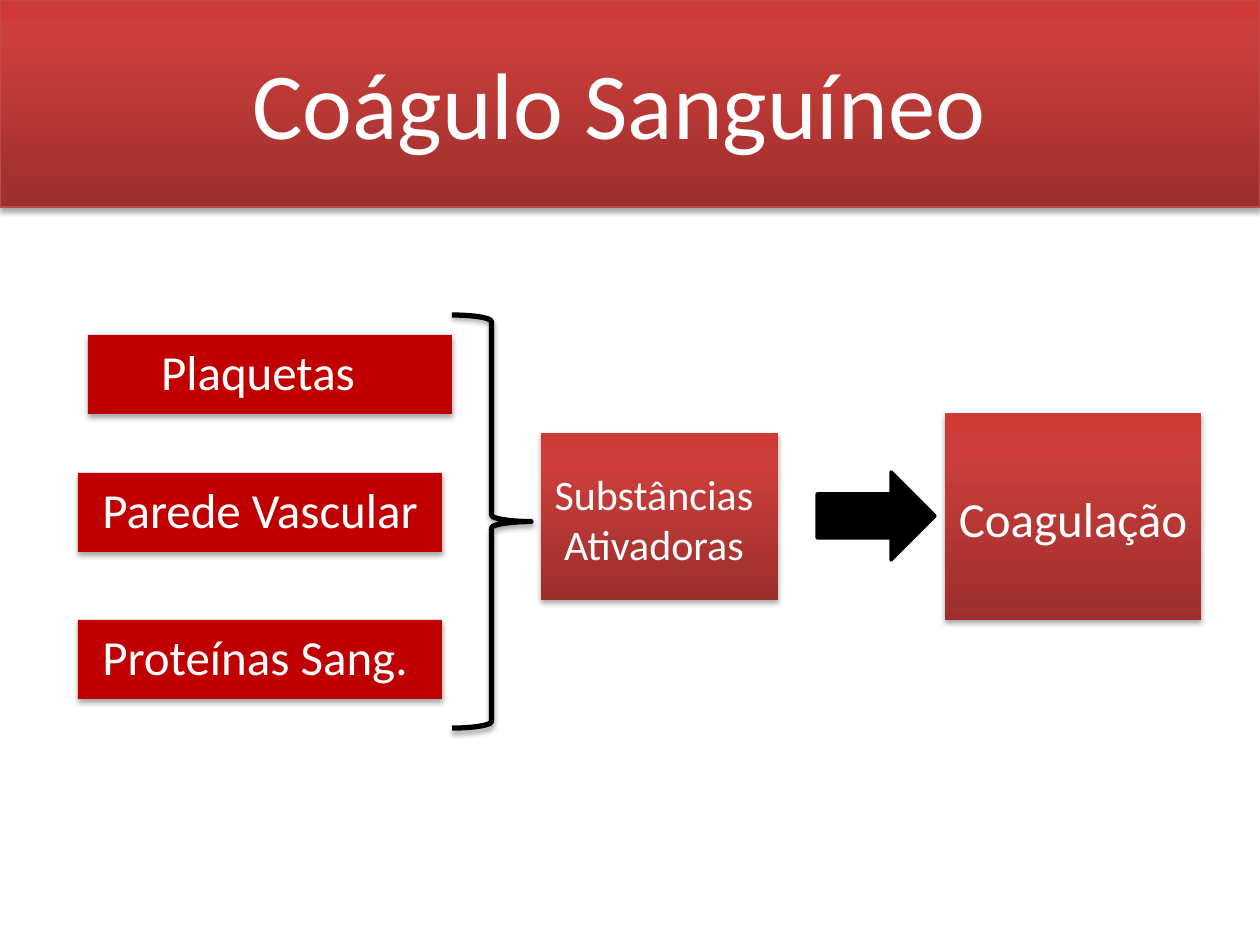
from copy import deepcopy

from pptx import Presentation
from pptx.dml.color import RGBColor
from pptx.enum.shapes import MSO_SHAPE as Shape
from pptx.enum.text import MSO_AUTO_SIZE as AutoSize, PP_ALIGN as Align
from pptx.oxml import parse_xml
from pptx.oxml.ns import nsdecls
from pptx.util import Emu, Pt

PX = 914400 / 126
COLORS = {
    "white": "FFFFFF",
    "black": "000000",
    "red": "C00000",
    "edge": "BF4C48",
    "dark": "9C2F2D",
    "middle": "CB3E3A",
    "light": "CE3B37",
}
GRADIENT = [(0, "dark"), (0.8, "middle"), (1, "light")]


def color(name):
    return RGBColor.from_string(COLORS[name])


def lengths(box):
    return [Emu(round(value * PX)) for value in box]


def inside(box, left, top, width, height):
    return box[0] + left, box[1] + top, width, height


def add_shadow(shape):
    shape._element.spPr.append(parse_xml(
        f'<a:effectLst {nsdecls("a")}>'
        '<a:outerShdw blurRad="40000" dist="23000" dir="5400000" rotWithShape="0">'
        f'<a:srgbClr val="{COLORS["black"]}"><a:alpha val="35000"/></a:srgbClr>'
        '</a:outerShdw></a:effectLst>'))


def fill_gradient(shape):
    shape.fill.gradient()
    shape.fill.gradient_angle = 90
    stop_list = shape._element.spPr.find(".//" + "{*}gsLst")
    stop_list.append(deepcopy(stop_list[0]))
    for stop, (position, name) in zip(shape.fill.gradient_stops, GRADIENT):
        stop.position = position
        stop.color.rgb = color(name)


def add_figure(page, kind, box, fill=None, line=None, weight=1, shadow=True):
    shape = page.shapes.add_shape(kind, *lengths(box))
    shape.shadow.inherit = False
    if fill == "gradient":
        fill_gradient(shape)
    elif fill:
        shape.fill.solid()
        shape.fill.fore_color.rgb = color(fill)
    else:
        shape.fill.background()
    if line:
        shape.line.color.rgb = color(line)
        shape.line.width = Pt(weight)
    else:
        shape.line.fill.background()
    if shadow:
        spPr = shape._element.spPr
        spPr.remove(spPr.find("{*}effectLst"))
        add_shadow(shape)
    return shape


def add_caption(page, box, lines, size):
    frame = page.shapes.add_textbox(*lengths(box)).text_frame
    frame.word_wrap = False
    frame.auto_size = AutoSize.SHAPE_TO_FIT_TEXT
    frame.text = "\n".join(lines)
    for para in frame.paragraphs:
        para.alignment = Align.CENTER
        para.font.name = "Calibri"
        para.font.size = Pt(size)
        para.font.color.rgb = color("white")


def add_banner(page, box):
    add_figure(page, Shape.RECTANGLE, box, "gradient", "edge", 0.75)
    add_caption(page, inside(box, 236, 39, 766, 127), ["Coágulo Sanguíneo"], 54)


def add_factor(page, box, name, text_left, text_width):
    add_figure(page, Shape.RECTANGLE, box, "red")
    add_caption(page, inside(box, text_left, 0, text_width, 72), [name], 28)


def add_factors(page, box):
    factors = [
        ("Plaquetas", 10, 0, 59, 222),
        ("Parede Vascular", 0, 138, 10, 344),
        ("Proteínas Sang.", 0, 285, 10, 334),
    ]
    for name, left, top, text_left, text_width in factors:
        add_factor(page, inside(box, left, top, 364, 79), name, text_left, text_width)


def add_activators(page, box):
    add_figure(page, Shape.FLOWCHART_PROCESS, box, "gradient")
    add_caption(page, inside(box, 0, 29, 226, 115), ["Substâncias", "Ativadoras"], 24)


def add_result(page, box):
    add_figure(page, Shape.RECTANGLE, box, "gradient")
    add_caption(page, inside(box, 0, 69, 256, 72), ["Coagulação"], 28)


def add_links(page, brace_box, arrow_box):
    brace = add_figure(page, Shape.LEFT_BRACE, brace_box, line="black", weight=3)
    brace.rotation = 180
    add_figure(page, Shape.RIGHT_ARROW, arrow_box, "black", "black", 2, shadow=False)


def main():
    deck = Presentation()
    deck.slide_width, deck.slide_height = lengths((1260, 945))
    page = deck.slides.add_slide(deck.slide_layouts[6])
    add_banner(page, (0, 0, 1260, 207))
    add_factors(page, (78, 335, 374, 364))
    add_links(page, (452, 315, 79, 413), (817, 472, 118, 88))
    add_activators(page, (541, 433, 237, 167))
    add_result(page, (945, 413, 256, 207))
    deck.save("out.pptx")


if __name__ == "__main__":
    main()
